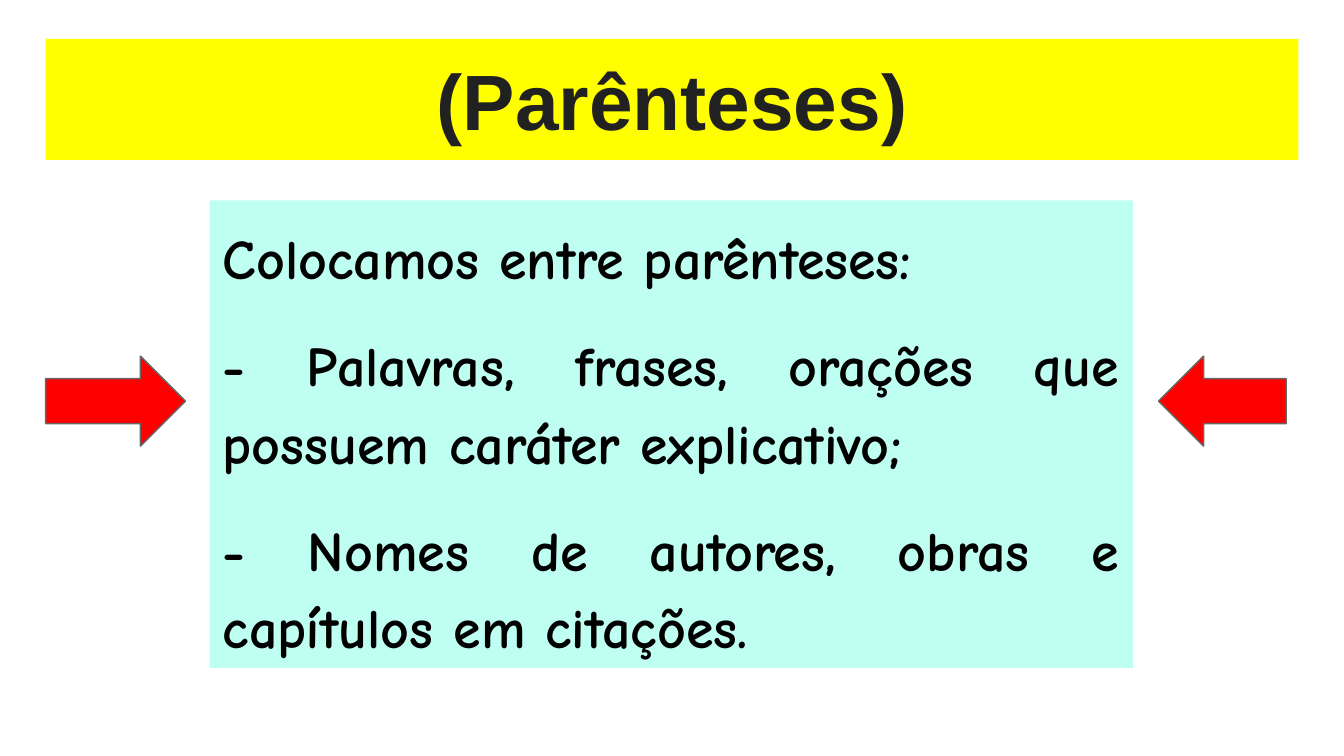
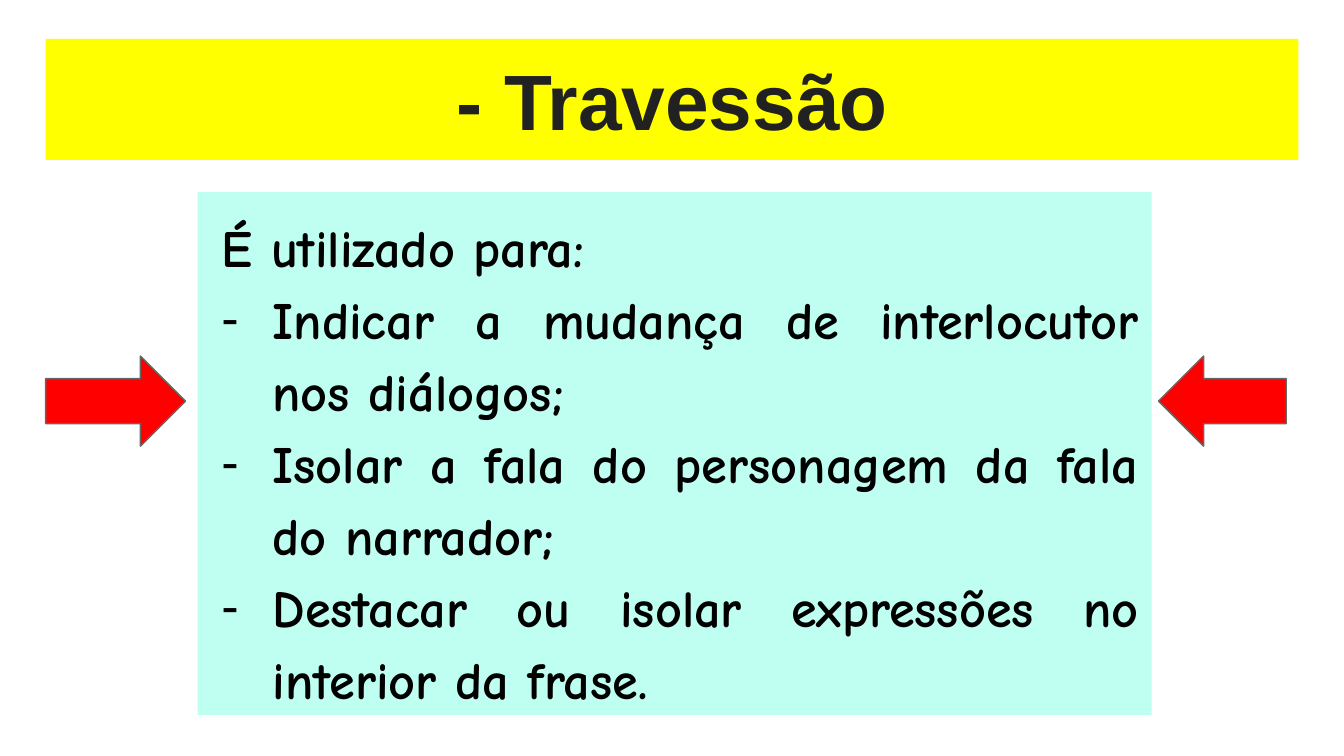
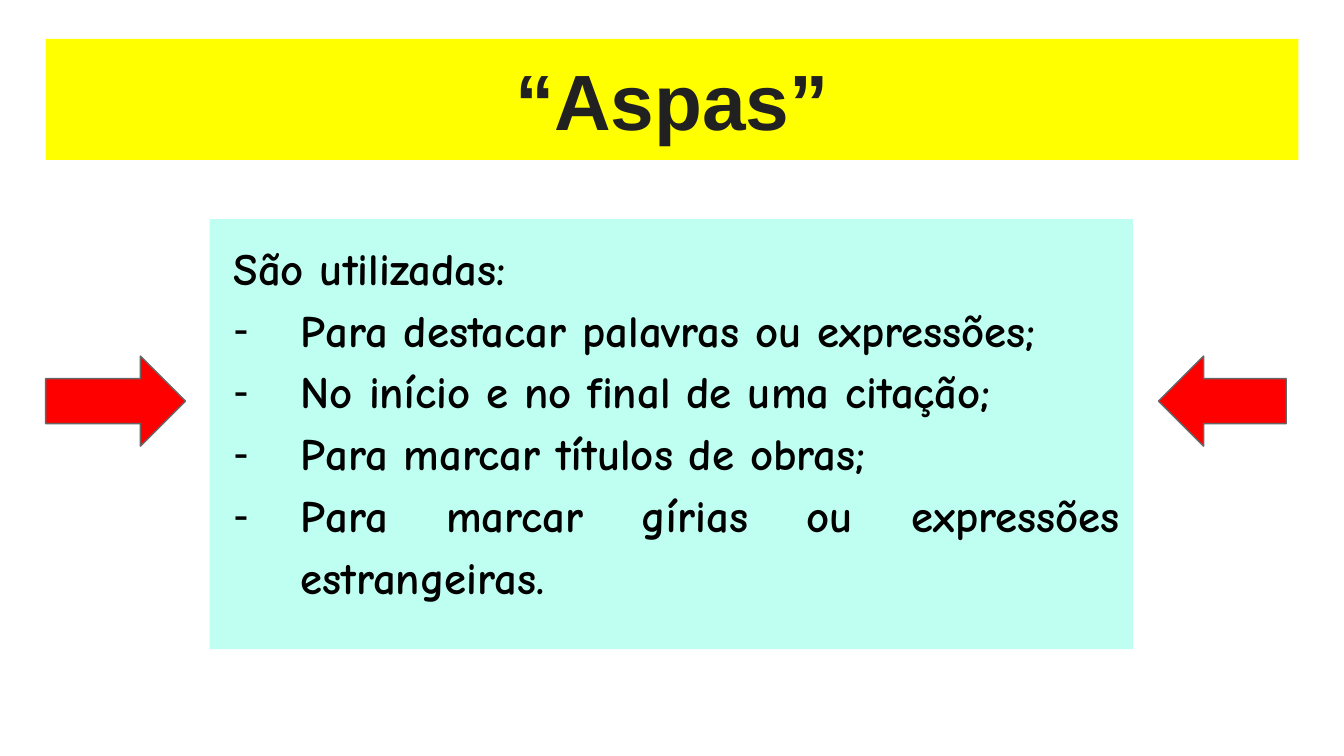
from dataclasses import dataclass

from lxml.etree import SubElement
from pptx import Presentation
from pptx.dml.color import RGBColor
from pptx.enum.shapes import MSO_SHAPE
from pptx.enum.text import MSO_ANCHOR, PP_ALIGN
from pptx.oxml.ns import qn
from pptx.util import Inches, Pt


@dataclass(frozen=True)
class Theme:
    band: RGBColor = RGBColor(0xFF, 0xFF, 0x00)
    heading: RGBColor = RGBColor(0x21, 0x21, 0x21)
    panel: RGBColor = RGBColor(0xBF, 0xFF, 0xF1)
    text: RGBColor = RGBColor(0x00, 0x00, 0x00)
    arrow: RGBColor = RGBColor(0xFF, 0x00, 0x00)
    arrow_edge: RGBColor = RGBColor(0x66, 0x66, 0x66)
    heading_font: str = "Arial"
    text_font: str = "Comic Neue"
    dash_font: str = "Arial"
    heading_size: int = 42
    line_spacing: float = 1.15
    inset: float = 0.1
    first_indent: float = 0.08


class Lesson:
    def __init__(self, theme):
        self.theme = theme
        self.deck = Presentation()
        self.deck.slide_width = Inches(10)
        self.deck.slide_height = Inches(10 * 9 / 16)
        self.slide = None

    def new_slide(self):
        self.slide = self.deck.slides.add_slide(self.deck.slide_layouts[6])

    def block(self, preset, box, color):
        block = self.slide.shapes.add_shape(preset, *map(Inches, box))
        block.shadow.inherit = False
        block.fill.solid()
        block.fill.fore_color.rgb = color
        block.line.fill.background()
        return block

    def text_block(self, box, color, anchor):
        frame = self.block(MSO_SHAPE.RECTANGLE, box, color).text_frame
        frame.word_wrap = True
        frame.vertical_anchor = anchor
        frame.margin_left = frame.margin_right = Inches(self.theme.inset)
        frame.margin_top = frame.margin_bottom = Inches(self.theme.inset)
        return frame

    def style(self, paragraph, align, font, size, color):
        paragraph.alignment = align
        paragraph.font.name = font
        paragraph.font.size = Pt(size)
        paragraph.font.bold = True
        paragraph.font.color.rgb = color

    def indent(self, paragraph, left, first):
        properties = paragraph._p.get_or_add_pPr()
        properties.set("marL", str(Inches(left)))
        properties.set("indent", str(Inches(first)))
        return properties

    def dash(self, paragraph, hanging):
        theme = self.theme
        properties = self.indent(paragraph, theme.first_indent + hanging, -hanging)
        dash_color = SubElement(properties, qn("a:buClr"))
        SubElement(dash_color, qn("a:srgbClr"), val=str(theme.text))
        SubElement(properties, qn("a:buFont"), typeface=theme.dash_font)
        SubElement(properties, qn("a:buChar"), char="-")

    def title(self, heading):
        theme = self.theme
        frame = self.text_block((0.34, 0.29, 9.32, 0.9), theme.band, MSO_ANCHOR.BOTTOM)
        frame.text = heading
        self.style(frame.paragraphs[0], PP_ALIGN.CENTER, theme.heading_font,
                   theme.heading_size, theme.heading)

    def rules(self, box, intro, uses, size, hanging=0, gap=0):
        theme = self.theme
        frame = self.text_block(box, theme.panel, MSO_ANCHOR.TOP)
        frame.text = "\n".join([intro, *uses])
        for position, paragraph in enumerate(frame.paragraphs):
            paragraph.line_spacing = theme.line_spacing
            paragraph.space_after = Pt(gap)
            if hanging and position:
                self.dash(paragraph, hanging)
            elif hanging:
                self.indent(paragraph, theme.first_indent, 0)
            self.style(paragraph, PP_ALIGN.JUSTIFY, theme.text_font, size, theme.text)

    def arrow(self, preset, left, width):
        arrow = self.block(preset, (left, 2.65, width, 0.67), self.theme.arrow)
        arrow.line.color.rgb = self.theme.arrow_edge
        arrow.line.width = Pt(0.75)

    def mark(self, heading, **rules):
        self.new_slide()
        self.title(heading)
        self.rules(**rules)
        self.arrow(MSO_SHAPE.RIGHT_ARROW, 0.34, 1.04)
        self.arrow(MSO_SHAPE.LEFT_ARROW, 8.62, 0.95)


def main():
    lesson = Lesson(Theme())
    lesson.mark(
        "(Parênteses)",
        box=(1.56, 1.49, 6.87, 3.48),
        intro="Colocamos entre parênteses:",
        uses=[
            "- Palavras, frases, orações que possuem caráter explicativo;",
            "- Nomes de autores, obras e capítulos em citações.",
        ],
        size=30,
        gap=16,
    )
    lesson.mark(
        "- Travessão",
        box=(1.47, 1.43, 7.1, 3.89),
        intro="É utilizado para:",
        uses=[
            "Indicar a mudança de interlocutor nos diálogos;",
            "Isolar a fala do personagem da fala do narrador;",
            "Destacar ou isolar expressões no interior da frase.",
        ],
        size=28,
        hanging=0.38,
    )
    lesson.mark(
        "“Aspas”",
        box=(1.56, 1.63, 6.87, 3.2),
        intro="São utilizadas:",
        uses=[
            "Para destacar palavras ou expressões;",
            "No início e no final de uma citação;",
            "Para marcar títulos de obras;",
            "Para marcar gírias ou expressões estrangeiras.",
        ],
        size=24,
        hanging=0.5,
    )
    lesson.deck.save("out.pptx")


if __name__ == "__main__":
    main()
